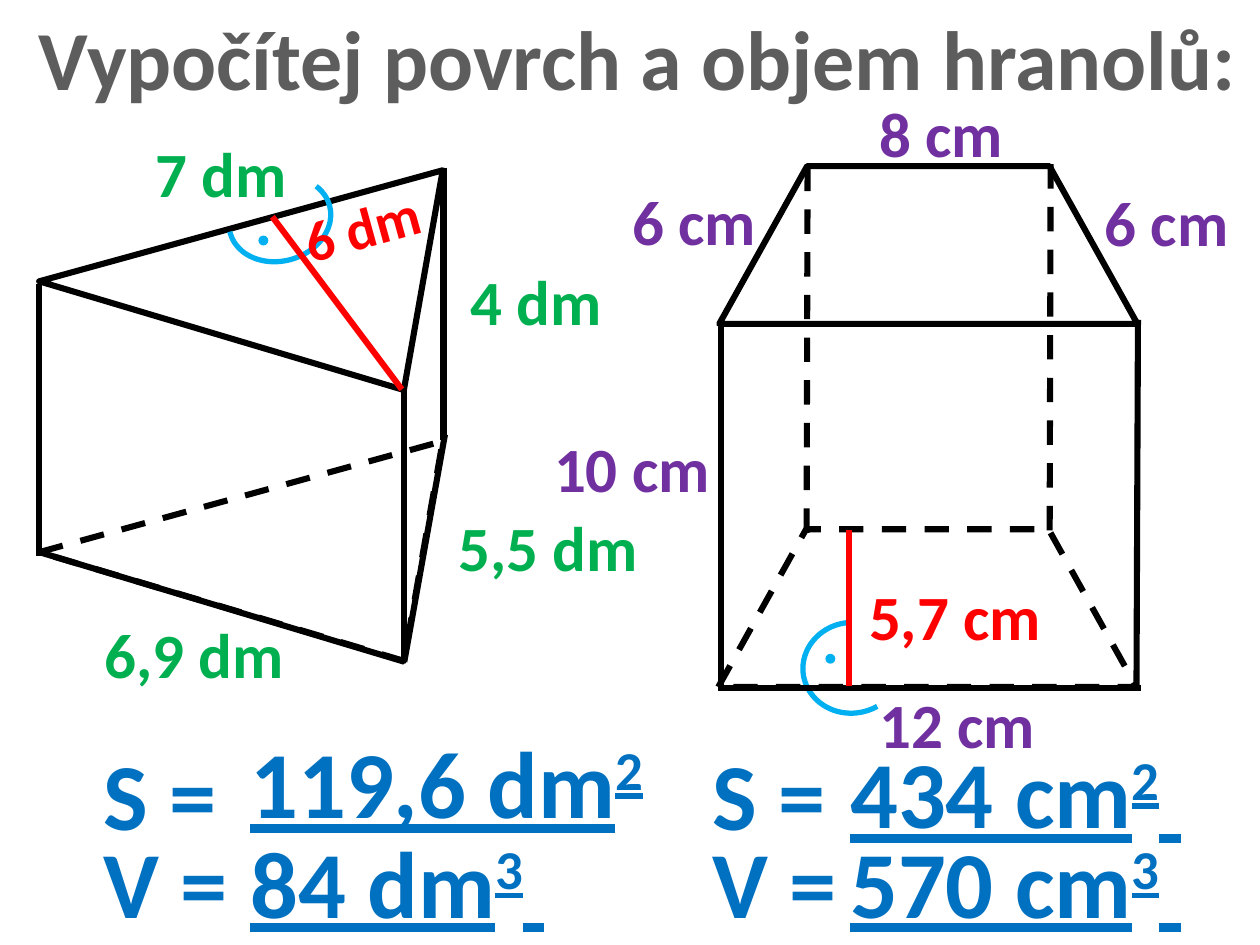
import pptx
import pptx.dml.color
import pptx.enum.dml
import pptx.enum.shapes
import pptx.enum.text
import pptx.util
import lxml.etree
from pptx.util import Cm

RGBColor = pptx.dml.color.RGBColor
BLACK = RGBColor(0x00, 0x00, 0x00)
GRAY = RGBColor(0x5D, 0x5D, 0x5D)
RED = RGBColor(0xFF, 0x00, 0x00)
GREEN = RGBColor(0x00, 0xB0, 0x50)
PURPLE = RGBColor(0x70, 0x30, 0xA0)
BLUE = RGBColor(0x00, 0x70, 0xC0)
SKY = RGBColor(0x00, 0xB0, 0xF0)
SHAPE = pptx.enum.shapes.MSO_SHAPE
DASH = pptx.enum.dml.MSO_LINE.DASH
DRAWING = "{http://schemas.openxmlformats.org/drawingml/2006/main}"


def format_line(line, color, width, dash=None):
    line.color.rgb = color
    for name, value in {"width": pptx.util.Pt(width), "dash_style": dash}.items():
        setattr(line, name, value)


def add_run(paragraph, text, size, color, underline=None):
    run = paragraph.add_run()
    run.text = text
    formats = {"name": "Calibri", "size": pptx.util.Pt(size), "bold": True, "underline": underline}
    for name, value in formats.items():
        setattr(run.font, name, value)
    run.font.color.rgb = color
    return run


presentation = pptx.Presentation()
presentation.slide_width = Cm(25.4)
presentation.slide_height = Cm(19.05)
slide = presentation.slides.add_slide(presentation.slide_layouts[5])

title = slide.shapes.title
for name, value in {"left": 0.41, "top": 0, "width": 24.89, "height": 2.31}.items():
    setattr(title, name, Cm(value))
title_formats = {
    "word_wrap": False,
    "auto_size": pptx.enum.text.MSO_AUTO_SIZE.NONE,
    "vertical_anchor": pptx.enum.text.MSO_ANCHOR.TOP,
}
for name, value in title_formats.items():
    setattr(title.text_frame, name, value)
title_paragraph = title.text_frame.paragraphs[0]
title_paragraph.alignment = pptx.enum.text.PP_ALIGN.CENTER
add_run(title_paragraph, "Vypočítej povrch a objem hranolů:", 48, GRAY)

outlines = [
    (SHAPE.ISOSCELES_TRIANGLE, 1.27, 2.39, 7.67, 4.47, 16.6, [0.933], BLACK, 3.5, None),
    (SHAPE.ISOSCELES_TRIANGLE, 1.27, 7.85, 7.67, 4.47, 16.6, [0.933], BLACK, 3.5, DASH),
    (SHAPE.TRAPEZOID, 14.48, 10.67, 8.43, 3.18, 0, [0.557], BLACK, 3.5, DASH),
    (SHAPE.TRAPEZOID, 14.5, 3.35, 8.43, 3.18, 0, [0.557], BLACK, 3.5, None),
    (SHAPE.ARC, 4.6, 3.58, 2.08, 1.68, 164.3, [92.06, 1.08], SKY, 3, None),
    (SHAPE.ARC, 16.26, 12.47, 1.83, 1.98, 263.4, [92.06, 1.08], SKY, 3, None),
]
for kind, left, top, width, height, rotation, adjustments, color, weight, dash in outlines:
    shape = slide.shapes.add_shape(kind, Cm(left), Cm(top), Cm(width), Cm(height))
    shape.shadow.inherit = False
    shape.rotation = rotation
    shape.fill.background()
    for index, value in enumerate(adjustments):
        shape.adjustments[index] = value
    format_line(shape.line, color, weight, dash)

edges = [
    (0.79, 11.13, 8.15, 13.34, BLACK, None),
    (8.97, 8.76, 8.15, 13.34, BLACK, None),
    (8.15, 7.85, 8.15, 13.34, BLACK, None),
    (8.94, 3.38, 8.94, 8.86, BLACK, None),
    (0.79, 5.72, 0.79, 11.2, BLACK, None),
    (14.48, 13.87, 23.01, 13.87, BLACK, None),
    (14.53, 13.89, 14.53, 6.48, BLACK, None),
    (22.91, 13.87, 22.94, 6.45, BLACK, None),
    (16.26, 10.74, 16.28, 3.35, BLACK, DASH),
    (21.16, 10.69, 21.18, 3.28, BLACK, DASH),
    (5.49, 4.37, 8.1, 7.85, RED, None),
    (17.12, 10.69, 17.12, 13.82, RED, None),
]
for start_x, start_y, end_x, end_y, color, dash in edges:
    edge = slide.shapes.add_connector(
        pptx.enum.shapes.MSO_CONNECTOR.STRAIGHT, Cm(start_x), Cm(start_y), Cm(end_x), Cm(end_y)
    )
    format_line(edge.line, color, 3.5, dash)
    lxml.etree.SubElement(edge._element.spPr, DRAWING + "effectLst")

for left, top in [(5.21, 4.75), (16.64, 13.18)]:
    dot = slide.shapes.add_shape(SHAPE.OVAL, Cm(left), Cm(top), Cm(0.2), Cm(0.2))
    dot.shadow.inherit = False
    dot.fill.solid()
    dot.fill.fore_color.rgb = SKY
    dot.line.fill.background()

labels = [
    ("12 cm", 17.48, 13.69, 4.57, 1.8, 0, 36, PURPLE),
    ("8 cm", 17.48, 1.78, 3.18, 1.8, 0, 36, PURPLE),
    ("5,7 cm", 17.27, 11.51, 4.78, 1.8, 0, 36, RED),
    ("6 dm", 5.87, 3.71, 3.18, 1.63, 344.6, 32, RED),
    ("10 cm", 10.92, 8.53, 3.96, 1.8, 0, 36, PURPLE),
    ("6 cm", 12.5, 3.56, 3.18, 1.8, 0, 36, PURPLE),
    ("6 cm", 22.02, 3.58, 3.18, 1.8, 0, 36, PURPLE),
    ("6,9 dm", 1.86, 12.29, 4.82, 1.8, 0, 36, GREEN),
    ("5,5 dm", 9, 10.13, 4.89, 1.8, 0, 36, GREEN),
    ("4 dm", 9.23, 5.16, 3.67, 1.8, 0, 36, GREEN),
    ("7 dm", 2.88, 2.59, 3.67, 1.8, 0, 36, GREEN),
]
for left in (1.83, 14.12):
    for text, top in [("S =", 14.71), ("V =", 16.48)]:
        labels.append((text, left, top, 3.53, 2.57, 0, 54, BLUE))
for text, left, top, width, height, rotation, size, color in labels:
    label = slide.shapes.add_textbox(Cm(left), Cm(top), Cm(width), Cm(height))
    label.rotation = rotation
    label.text_frame.word_wrap = True
    add_run(label.text_frame.paragraphs[0], text, size, color)

results = [
    ("119,6 dm", "2", "", 4.8, 14.48, 9.3),
    ("84 dm", "3", " ", 4.8, 16.48, 8.31),
    ("434 cm", "2", " ", 16.89, 14.68, 8.31),
    ("570 cm", "3", " ", 16.89, 16.48, 8.31),
]
for amount, power, ending, left, top, width in results:
    result = slide.shapes.add_textbox(Cm(left), Cm(top), Cm(width), Cm(2.57))
    result.text_frame.word_wrap = True
    paragraph = result.text_frame.paragraphs[0]
    add_run(paragraph, amount, 54, BLUE, True)
    exponent = add_run(paragraph, power, 54, BLUE, True)
    exponent._r.get_or_add_rPr().set("baseline", "30000")
    if ending:
        add_run(paragraph, ending, 54, BLUE, True)

presentation.save("out.pptx")
